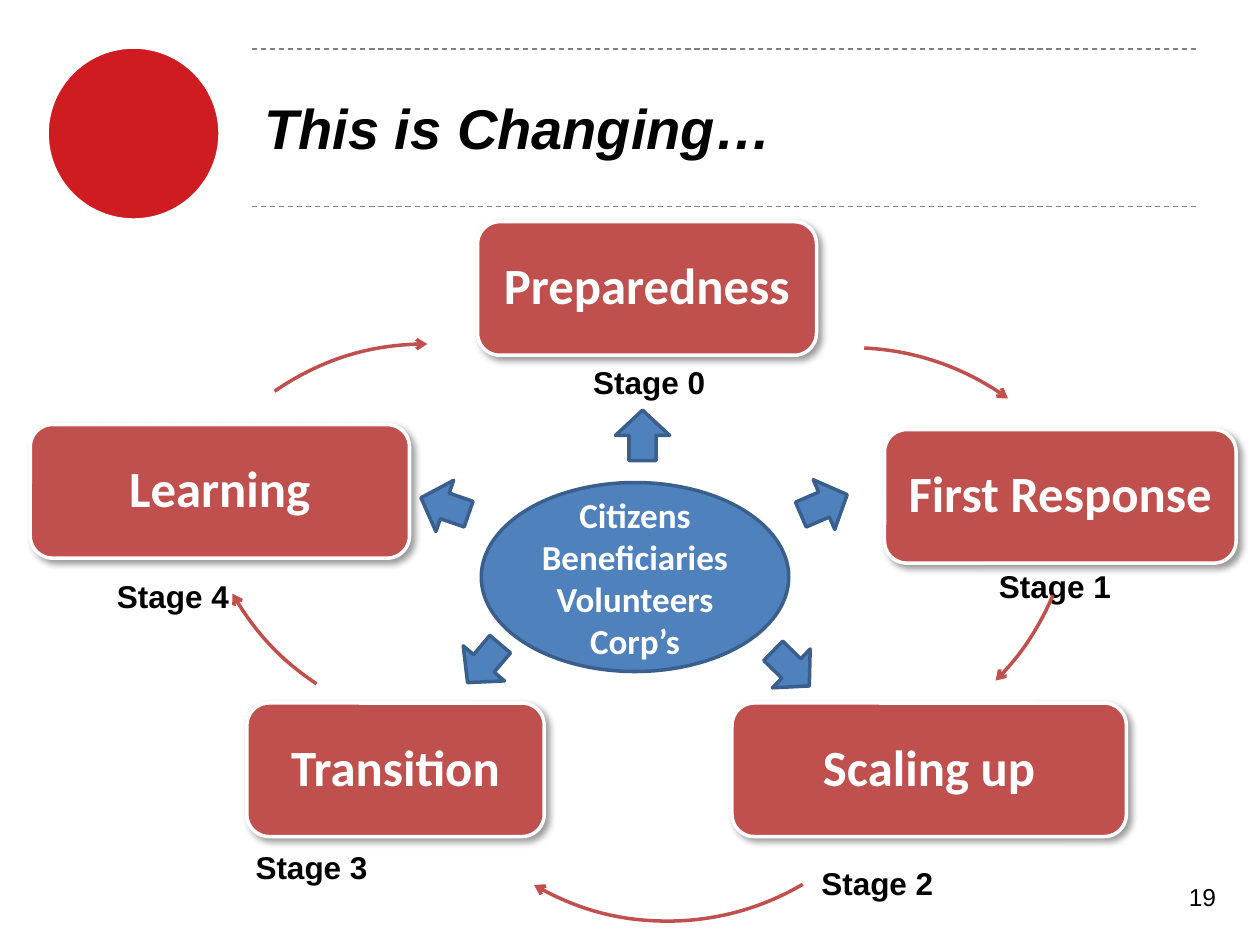
import pptx
import pptx.util
import pptx.dml.color
import pptx.enum.dml
import pptx.enum.shapes
import pptx.enum.text
import pptx.oxml
import pptx.oxml.ns
from lxml import etree

Inches, Pt = pptx.util.Inches, pptx.util.Pt
SHAPE = pptx.enum.shapes.MSO_SHAPE
ALIGN = pptx.enum.text.PP_ALIGN
MIDDLE = pptx.enum.text.MSO_ANCHOR.MIDDLE
qn = pptx.oxml.ns.qn

COLORS = {"disc": "CF1C21", "stage": "C0504D", "core": "4F81BD", "core_line": "3A5F8C",
          "rule": "808080", "white": "FFFFFF", "black": "000000"}

TITLE = "This is Changing…"
PAGE = "19"
CORE = ["Citizens", "Beneficiaries", "Volunteers", "Corp’s"]
RULE_YS = [0.39, 1.64]

# name, left, top, width of the box; left, top of its stage label
STAGES = [
    ("Preparedness", 3.79, 1.76, 2.69, 4.61, 2.83),
    ("First Response", 7.02, 3.41, 2.79, 7.83, 4.45),
    ("Scaling up", 5.81, 5.58, 3.13, 6.42, 6.81),
    ("Transition", 1.96, 5.58, 2.36, 1.93, 6.68),
    ("Learning", 0.24, 3.37, 3.01, 0.83, 4.53),
]
BOX_HEIGHT = 1.06

# left, top of each arc's circle; start and end angle, clockwise from the right
ARCS = [
    (4.65, 2.76, 272.7, 306),
    (4.30, 1.80, 22.7, 45),
    (3.19, 3.09, 59.5, 120.2),
    (1.57, 1.56, 123.6, 150.4),
    (1.27, 2.73, 235.3, 270.3),
]
ARC_SIZE = 4.22

# left, top, rotation
CORE_ARROWS = [(4.9, 3.24, 270), (6.08, 5.09, 44.2), (6.34, 3.79, 336.7),
               (3.64, 5.05, 130.3), (3.33, 3.8, 199)]


def rgb(name):
    return pptx.dml.color.RGBColor.from_string(COLORS[name])


def add_shape(slide, kind, box, fill, line, width):
    s = slide.shapes.add_shape(kind, *map(Inches, box))
    s.shadow.inherit = False
    if fill:
        s.fill.solid()
        s.fill.fore_color.rgb = rgb(fill)
    else:
        s.fill.background()
    s.line.color.rgb = rgb(line)
    s.line.width = Pt(width)
    return s


def write(s, lines, size, font, color, align=ALIGN.LEFT, bold=True, italic=False,
          inset=None, wrap=True):
    tf = s.text_frame
    tf.text = "\n".join(lines)
    tf.word_wrap = wrap
    if inset is not None:
        tf.margin_left = tf.margin_right = tf.margin_top = tf.margin_bottom = Inches(inset)
    for p in tf.paragraphs:
        p.alignment = align
        for r in p.runs:
            r.font.size, r.font.name = Pt(size), font
            r.font.bold, r.font.italic = bold, italic
            r.font.color.rgb = rgb(color)
    return tf


def add_text(slide, box, lines, *style, **options):
    s = slide.shapes.add_textbox(*map(Inches, box))
    return write(s, lines, *style, **options)


def add_drop_shadow(s):
    effects = s._element.spPr.find(qn("a:effectLst"))
    shadow = etree.SubElement(effects, qn("a:outerShdw"), blurRad=str(Pt(4)), dist=str(Pt(3)),
                              dir=str(45 * 60000), rotWithShape="0")
    color = etree.SubElement(shadow, qn("a:srgbClr"), val=COLORS["black"])
    etree.SubElement(color, qn("a:alpha"), val="40000")


def add_header(slide):
    add_shape(slide, SHAPE.OVAL, (0.37, 0.37, 1.38, 1.38), "disc", "white", 2.5)
    for y in RULE_YS:
        c = slide.shapes.add_connector(pptx.enum.shapes.MSO_CONNECTOR.STRAIGHT,
                                       Inches(2), Inches(y), Inches(9.5), Inches(y))
        c.line.color.rgb = rgb("rule")
        c.line.width = Pt(0.75)
        c.line.dash_style = pptx.enum.dml.MSO_LINE.DASH
        etree.SubElement(c._element.spPr, qn("a:effectLst"))
    tf = add_text(slide, (2, 0.38, 7.5, 1.25), [TITLE], 32, "Arial", "black", italic=True)
    tf.vertical_anchor = MIDDLE


def add_cycle(slide):
    for number, (name, x, y, width, label_x, label_y) in enumerate(STAGES):
        s = add_shape(slide, SHAPE.ROUNDED_RECTANGLE, (x, y, width, BOX_HEIGHT),
                      "stage", "white", 2)
        add_drop_shadow(s)
        tf = write(s, [name], 29, "Calibri", "white", align=ALIGN.CENTER, inset=0.12)
        tf.vertical_anchor = MIDDLE
        tf.paragraphs[0].line_spacing = 0.9
        add_text(slide, (label_x, label_y, 1.1, 0.4), [f"Stage {number}"],
                 18, "Arial", "black", wrap=False)
    for x, y, start, end in ARCS:
        s = add_shape(slide, SHAPE.ARC, (x, y, ARC_SIZE, ARC_SIZE), None, "stage", 2)
        # adjustments count in 100000ths, angles in 60000ths of a degree
        s.adjustments[0], s.adjustments[1] = start * 0.6, end * 0.6
        etree.SubElement(s.line._get_or_add_ln(), qn("a:tailEnd"), type="arrow")


def add_core(slide):
    s = add_shape(slide, SHAPE.OVAL, (3.82, 3.83, 2.44, 1.5), "core", "core_line", 2)
    tf = write(s, CORE, 20, "Calibri", "white", align=ALIGN.CENTER)
    tf.vertical_anchor = MIDDLE
    for x, y, rotation in CORE_ARROWS:
        s = add_shape(slide, SHAPE.RIGHT_ARROW, (x, y, 0.4, 0.43), "core", "core_line", 2)
        s.rotation = rotation


def main():
    prs = pptx.Presentation()
    prs.slide_width, prs.slide_height = Inches(10), Inches(7.5)
    slide = prs.slides.add_slide(prs.slide_layouts[6])
    add_header(slide)
    add_cycle(slide)
    add_text(slide, (7.42, 6.95, 2.33, 0.4), [PAGE], 14, "Arial", "black",
             align=ALIGN.RIGHT, bold=False)
    add_core(slide)
    prs.save("out.pptx")


if __name__ == "__main__":
    main()
